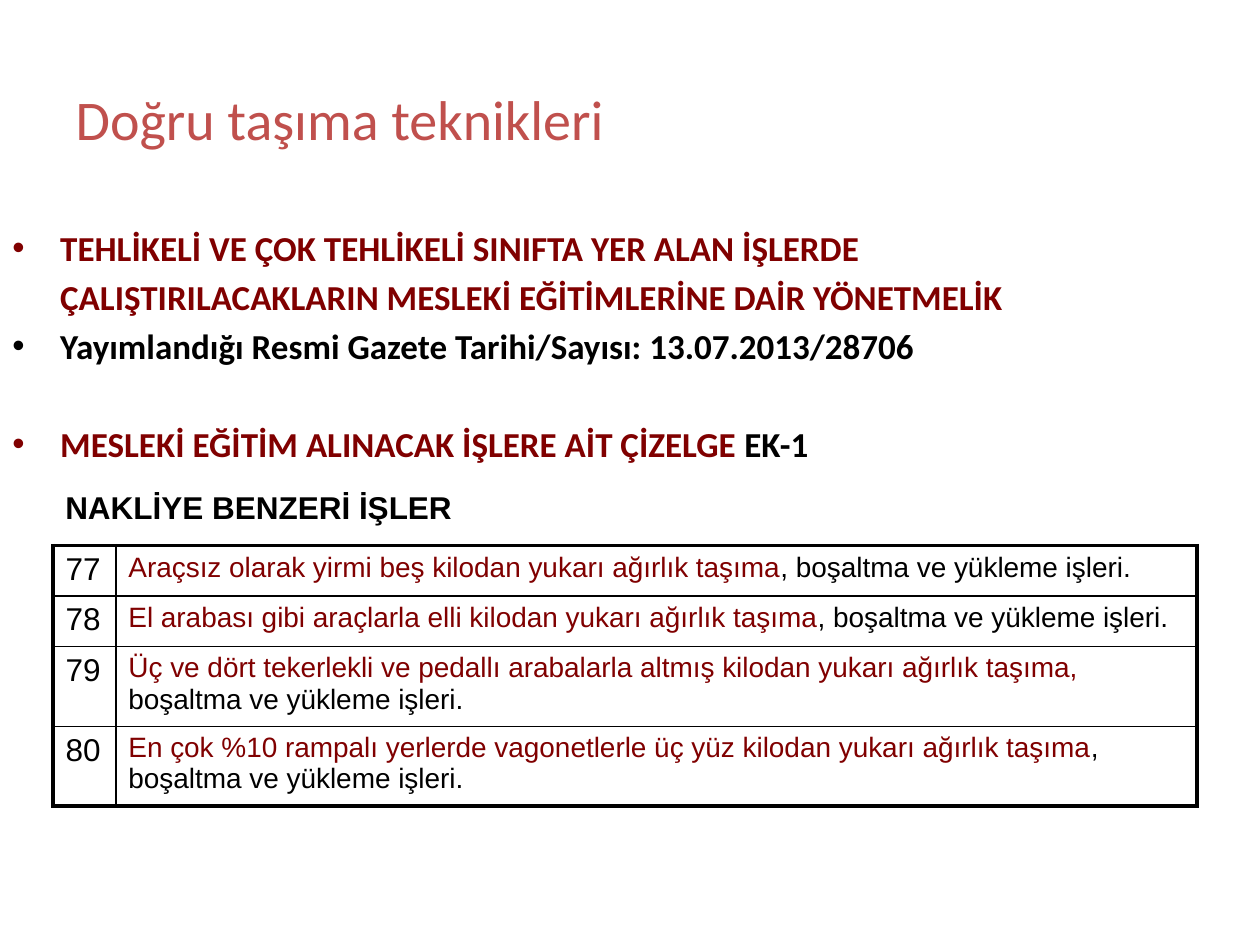
from lxml.etree import SubElement
from pptx import Presentation
from pptx.dml.color import RGBColor
from pptx.enum.text import MSO_ANCHOR, PP_ALIGN
from pptx.oxml import parse_xml
from pptx.oxml.ns import nsdecls, qn
from pptx.util import Inches, Pt

COLORS = {"title": "C0504D", "accent": "800000", "text": "000000"}
HEADING_FONT, TABLE_FONT = "Calibri", "Arial"
THIN, THICK = 1, 2.25

REGULATION = [  # (bulleted, space before in points, [(wording, color)])
    (True, 0, [("TEHLİKELİ VE ÇOK TEHLİKELİ SINIFTA YER ALAN İŞLERDE", "accent")]),
    (False, 4, [("ÇALIŞTIRILACAKLARIN MESLEKİ EĞİTİMLERİNE DAİR YÖNETMELİK", "accent")]),
    (True, 4, [("Yayımlandığı Resmi Gazete Tarihi/Sayısı: 13.07.2013/28706", "text")]),
    (True, 32, [("MESLEKİ EĞİTİM ALINACAK İŞLERE AİT ÇİZELGE ", "accent"), ("EK-1", "text")]),
]
JOBS = [  # (number, load carried, rest of the entry, row height in inches)
    ("77", "Araçsız olarak yirmi beş kilodan yukarı ağırlık taşıma",
     ", boşaltma ve yükleme işleri.", 0.38),
    ("78", "El arabası gibi araçlarla elli kilodan yukarı ağırlık taşıma",
     ", boşaltma ve yükleme işleri.", 0.38),
    ("79", "Üç ve dört tekerlekli ve pedallı arabalarla altmış kilodan yukarı ağırlık taşıma,",
     " boşaltma ve yükleme işleri.", 0.59),
    ("80", "En çok %10 rampalı yerlerde vagonetlerle üç yüz kilodan yukarı ağırlık taşıma",
     ", boşaltma ve yükleme işleri.", 0.59),
]


class SlideBuilder:
    """Places elements by shares of the slide's width and height."""

    def __init__(self, deck):
        self.width, self.height = deck.slide_width, deck.slide_height
        self.slide = deck.slides.add_slide(deck.slide_layouts[5])

    def area(self, left, top, width, height):
        return (int(left * self.width), int(top * self.height),
                int(width * self.width), int(height * self.height))

    def add_runs(self, paragraph, parts, font, size, bold=False):
        for wording, color in parts:
            run = paragraph.add_run()
            run.text = wording
            run.font.name, run.font.size, run.font.bold = font, Pt(size), bold
            run.font.color.rgb = RGBColor.from_string(COLORS[color])

    def title(self, wording, *shares):
        title = self.slide.shapes.title
        title.left, title.top, title.width, title.height = self.area(*shares)
        title.text_frame.vertical_anchor = MSO_ANCHOR.MIDDLE
        heading = title.text_frame.paragraphs[0]
        heading.alignment = PP_ALIGN.LEFT
        self.add_runs(heading, [(wording, "title")], HEADING_FONT, 32)

    def bullets(self, items, *shares):
        frame = self.slide.shapes.add_textbox(*self.area(*shares)).text_frame
        frame.word_wrap = True
        for index, (bulleted, space, parts) in enumerate(items):
            paragraph = frame.add_paragraph() if index else frame.paragraphs[0]
            properties = paragraph._p.get_or_add_pPr()
            properties.set("marL", str(Inches(0.38)))
            if bulleted:
                properties.set("indent", str(-Inches(0.38)))
                SubElement(properties, qn("a:buFont"), typeface="Arial")
                SubElement(properties, qn("a:buChar"), char="•")
            if space:
                paragraph.space_before = Pt(space)
            self.add_runs(paragraph, parts, HEADING_FONT, 20, bold=True)

    def caption(self, wording, *shares):
        frame = self.slide.shapes.add_textbox(*self.area(*shares)).text_frame
        frame.word_wrap = False
        self.add_runs(frame.paragraphs[0], [(wording, "text")], TABLE_FONT, 18, bold=True)

    def borders(self, cell, **widths):
        """Draw the L, R, T and B edges at the given widths in points."""
        properties = cell._tc.get_or_add_tcPr()
        for index, (side, points) in enumerate(widths.items()):
            properties.insert(index, parse_xml(
                f'<a:ln{side} {nsdecls("a")} w="{Pt(points)}"><a:solidFill>'
                f'<a:srgbClr val="{COLORS["text"]}"/></a:solidFill></a:ln{side}>'))

    def job_table(self, jobs, number_share, *shares):
        frame = self.slide.shapes.add_table(len(jobs), 2, *self.area(*shares))
        table, total = frame.table, frame.width
        table.first_row = table.horz_banding = False
        table.columns[0].width = int(total * number_share)
        table.columns[1].width = total - table.columns[0].width
        last = len(jobs) - 1
        for row, (number, load, rest, height) in enumerate(jobs):
            table.rows[row].height = Inches(height)
            entries = [([(number, "text")], 18), ([(load, "accent"), (rest, "text")], 16)]
            for column, (parts, size) in enumerate(entries):
                cell = table.cell(row, column)
                self.add_runs(cell.text_frame.paragraphs[0], parts, TABLE_FONT, size)
                cell.fill.background()
                self.borders(cell,
                             L=THIN if column else THICK, R=THICK if column else THIN,
                             T=THIN if row else THICK, B=THICK if row == last else THIN)


def main():
    deck = Presentation()
    deck.slide_width, deck.slide_height = Inches(10), Inches(7.5)
    page = SlideBuilder(deck)
    page.title("Doğru taşıma teknikleri", 0.05, 0.04, 0.9, 0.17)
    page.bullets(REGULATION, 0, 1.75 / 7.5, 1, 0.29)
    page.job_table(JOBS, 0.055, 0.042, 4.33 / 7.5, 0.908, 0.26)
    page.caption("NAKLİYE BENZERİ İŞLER", 0.042, 0.51, 0.327, 0.053)
    deck.save("out.pptx")


if __name__ == "__main__":
    main()
